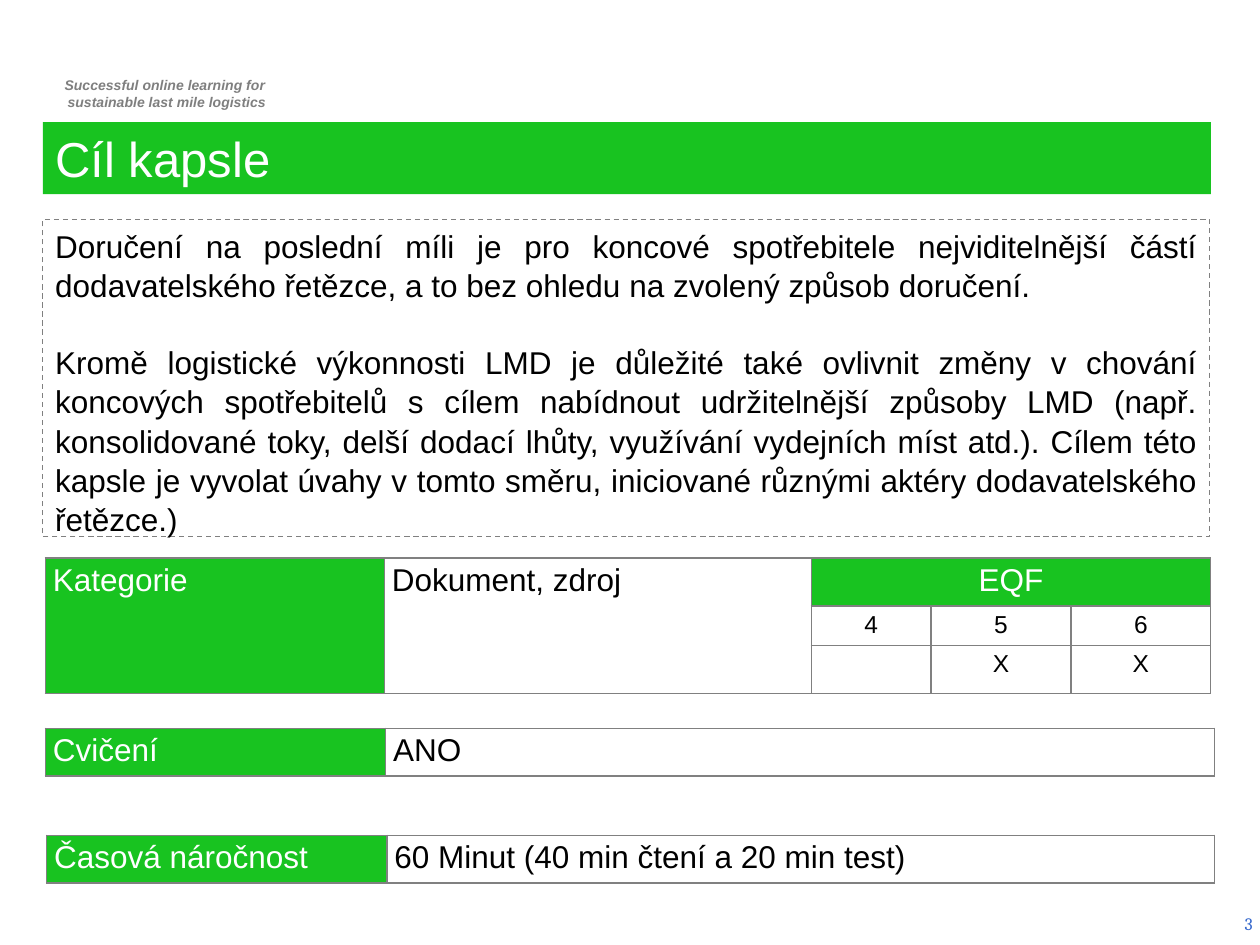
from lxml.etree import SubElement
from pptx import Presentation
from pptx.dml.color import RGBColor
from pptx.enum.dml import MSO_LINE
from pptx.enum.shapes import MSO_SHAPE
from pptx.enum.text import MSO_ANCHOR, PP_ALIGN
from pptx.oxml.ns import qn
from pptx.util import Inches, Pt

COLORS = {"green": "18C320", "white": "FFFFFF", "black": "000000",
          "gray": "808080", "header": "7F7F7F", "number": "3366CC"}
HEADER = ["Successful online learning for ", "sustainable last mile logistics"]
TITLE = "Cíl kapsle"
GOALS = [
    "Doručení na poslední míli je pro koncové spotřebitele nejviditelnější částí "
    "dodavatelského řetězce, a to bez ohledu na zvolený způsob doručení. ",
    "Kromě logistické výkonnosti LMD je důležité také ovlivnit změny v chování "
    "koncových spotřebitelů s cílem nabídnout udržitelnější způsoby LMD (např. "
    "konsolidované toky, delší dodací lhůty, využívání vydejních míst atd.). Cílem této "
    "kapsle je vyvolat úvahy v tomto směru, iniciované různými aktéry dodavatelského "
    "řetězce.)",
]
LABEL = {"size": 18, "color": "white", "fill": "green"}
VALUE = {"size": 18, "color": "black"}
LEVEL = {"size": 14, "color": "black", "align": PP_ALIGN.CENTER}
EQF = {**LABEL, "align": PP_ALIGN.CENTER}
TABLES = [
    {"at": (0.36, 4.43), "cols": [2.69, 3.39, 0.95, 1.11, 1.11], "rows": [0.37, 0.31, 0.37],
     "cells": [[("Kategorie ", LABEL), ("Dokument, zdroj", VALUE), ("EQF", EQF), None, None],
               [None, None, ("4", LEVEL), ("5", LEVEL), ("6", LEVEL)],
               [None, None, None, ("X", LEVEL), ("X", LEVEL)]],
     "merges": [((0, 0), (2, 0)), ((0, 1), (2, 1)), ((0, 2), (0, 4))]},
    {"at": (0.36, 5.78), "cols": [2.7, 6.58], "rows": [0.37],
     "cells": [[("Cvičení", LABEL), ("ANO", VALUE)]], "merges": []},
    {"at": (0.37, 6.63), "cols": [2.7, 6.57], "rows": [0.37],
     "cells": [[("Časová náročnost", LABEL), ("60 Minut (40 min čtení a 20 min test)", VALUE)]],
     "merges": []},
]


def rgb(name):
    return RGBColor.from_string(COLORS[name])


def set_attrs(obj, values):
    for name, value in values.items():
        setattr(obj, name, value)


def place(sp, x, y, w, h):
    set_attrs(sp, {"left": Inches(x), "top": Inches(y), "width": Inches(w), "height": Inches(h)})


def write(tf, lines, size, color, align=PP_ALIGN.LEFT, name="Arial", **font):
    for i, line in enumerate(lines):
        p = tf.paragraphs[0] if i == 0 else tf.add_paragraph()
        p.alignment = align
        r = p.add_run()
        r.text = line
        set_attrs(r.font, {"size": Pt(size), "name": name, **font})
        r.font.color.rgb = rgb(color)


def add_text(s, box, lines, anchor=MSO_ANCHOR.TOP, **style):
    tf = s.shapes.add_textbox(*map(Inches, box)).text_frame
    set_attrs(tf, {"word_wrap": True, "vertical_anchor": anchor})
    write(tf, lines, **style)
    return tf


def add_borders(cell):
    tcPr = cell._tc.get_or_add_tcPr()
    for i, side in enumerate(("lnL", "lnR", "lnT", "lnB")):
        ln = tcPr.makeelement(qn(f"a:{side}"), {"w": str(Pt(1))})
        fill = SubElement(ln, qn("a:solidFill"))
        SubElement(fill, qn("a:srgbClr"), val=COLORS["gray"])
        tcPr.insert(i, ln)


def add_grid(s, at, cols, rows, cells, merges):
    size = (sum(cols), sum(rows))
    table = s.shapes.add_table(len(rows), len(cols), *map(Inches, at + size)).table
    set_attrs(table, {"first_row": False, "horz_banding": False})
    for col, w in zip(table.columns, cols):
        col.width = Inches(w)
    for row, h in zip(table.rows, rows):
        row.height = Inches(h)
    for start, end in merges:
        table.cell(*start).merge(table.cell(*end))
    for i, row in enumerate(cells):
        for j, content in enumerate(row):
            cell = table.cell(i, j)
            set_attrs(cell, {"margin_left": Inches(0.06), "margin_right": Inches(0.06),
                             "margin_top": Inches(0.04), "margin_bottom": Inches(0.04)})
            cell.fill.background()
            if content:
                text, style = content
                style = {"align": PP_ALIGN.JUSTIFY, **style}
                fill = style.pop("fill", None)
                if fill:
                    cell.fill.solid()
                    cell.fill.fore_color.rgb = rgb(fill)
                write(cell.text_frame, [text], **style)
            add_borders(cell)


def main():
    prs = Presentation()
    set_attrs(prs, {"slide_width": Inches(10), "slide_height": Inches(7.5)})
    s = prs.slides.add_slide(prs.slide_layouts[5])

    title = s.shapes.title
    place(title, 0.34, 0.97, 9.27, 0.57)
    title.fill.solid()
    title.fill.fore_color.rgb = rgb("green")
    title.text_frame.vertical_anchor = MSO_ANCHOR.TOP
    write(title.text_frame, [TITLE], 28, "white")

    header = add_text(s, (0.29, 0.56, 2.03, 0.37), HEADER, size=8, color="header",
                      align=PP_ALIGN.CENTER, bold=True, italic=True)
    for p in header.paragraphs:
        p._p.get_or_add_pPr().set("marL", str(Inches(0.04)))
    add_text(s, (7.71, 7.13, 2.33, 0.4), ["3"], MSO_ANCHOR.MIDDLE, size=10,
             color="number", align=PP_ALIGN.RIGHT, name="Cambria")

    goal = s.shapes.add_shape(MSO_SHAPE.RECTANGLE, *map(Inches, (0.34, 1.74, 9.26, 2.52)))
    goal.shadow.inherit = False
    goal.fill.background()
    set_attrs(goal.line, {"width": Pt(0.75), "dash_style": MSO_LINE.DASH})
    goal.line.color.rgb = rgb("gray")
    tf = goal.text_frame
    set_attrs(tf, {"word_wrap": True, "vertical_anchor": MSO_ANCHOR.TOP})
    write(tf, GOALS, 18, "black", PP_ALIGN.JUSTIFY)
    for p in tf.paragraphs:
        p.line_spacing = 1.04
    tf.paragraphs[1].space_before = Pt(21.5)

    for grid in TABLES:
        add_grid(s, **grid)
    prs.save("out.pptx")


if __name__ == "__main__":
    main()
